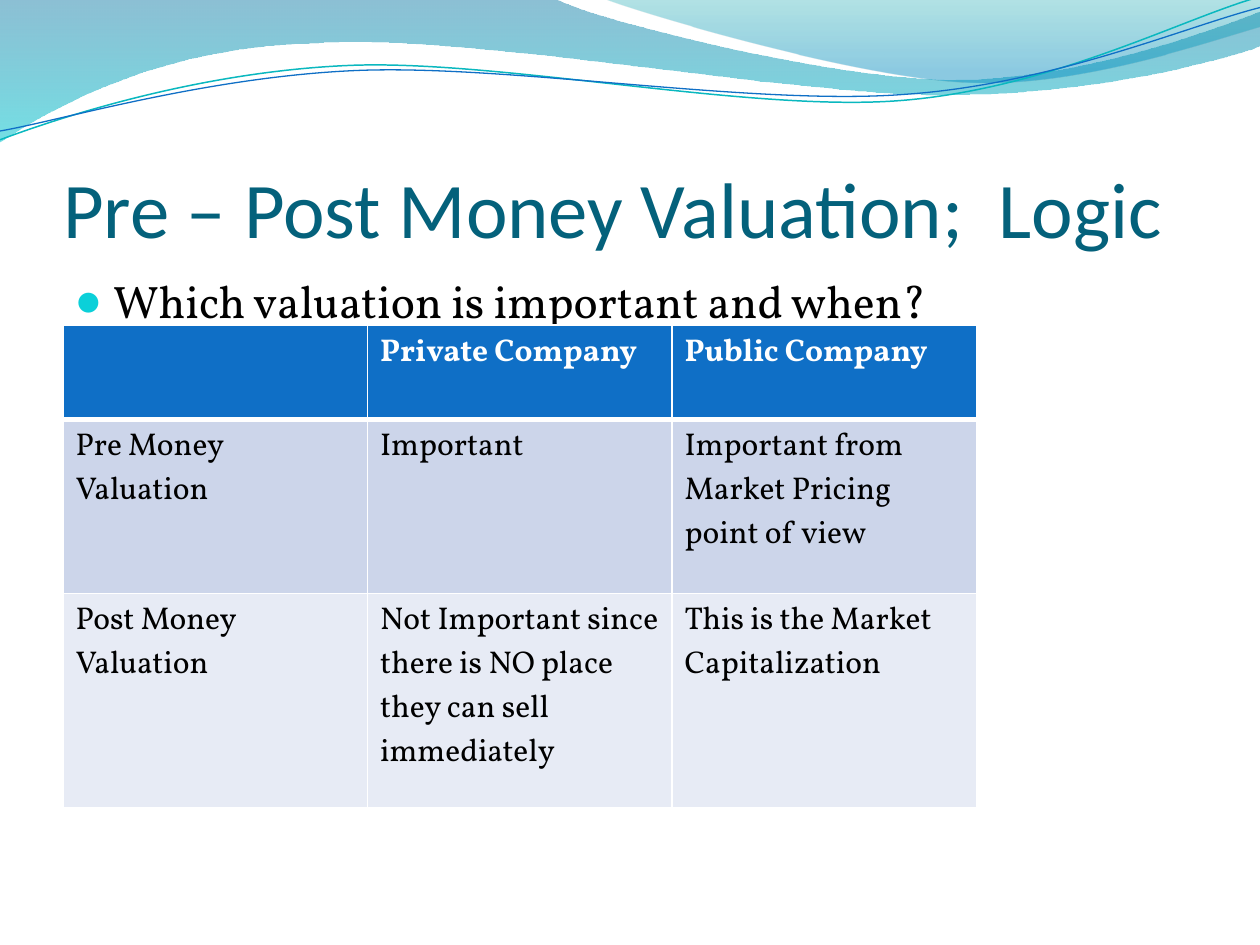
from dataclasses import dataclass
from pptx import Presentation
from pptx.dml.color import RGBColor
from pptx.enum.text import MSO_ANCHOR, MSO_AUTO_SIZE, PP_ALIGN
from pptx.oxml import parse_xml
from pptx.oxml.ns import nsdecls
from pptx.oxml.xmlchemy import OxmlElement
from pptx.util import Inches, Pt


@dataclass(frozen=True)
class Theme:
    title_font: str = "Calibri"
    body_font: str = "Vollkorn"
    title_size: int = 45
    body_size: int = 26
    table_size: int = 18
    title: str = "04617B"
    text: str = "000000"
    white: str = "FFFFFF"
    bullet: str = "0BD0D9"
    header: str = "0F6FC6"
    bands: tuple = ("CCD5EA", "E7EBF5")
    teal_line: str = "0AB8BF"
    blue_line: str = "0F6FC6"
    wide_wave: tuple = ((0, "0074A1", 45), (1, "00C6CF", 55))
    right_wave: tuple = ((0, "00A1A9", 30), (0.8, "008BBF", 45))


theme = Theme()


def add_wave(slide, start, segments, close):
    builder = slide.shapes.build_freeform(Inches(start[0]), Inches(start[1]))
    builder.add_line_segments([(Inches(x), Inches(y)) for seg in segments for x, y in seg], close=close)
    sp = builder.convert_to_shape()
    sp.shadow.inherit = False
    steps = iter(sp._element.spPr.xpath(".//a:path/a:lnTo"))
    for seg in segments:
        group = [next(steps) for point in seg]
        if len(group) == 3:
            curve = OxmlElement("a:cubicBezTo")
            group[0].addprevious(curve)
            for step in group:
                curve.append(step[0])
                step.getparent().remove(step)
    return sp


def style_text(p, font, size, color, bold=False):
    p.font.name = font
    p.font.size = Pt(size)
    p.font.bold = bold
    p.font.color.rgb = RGBColor.from_string(color)


prs = Presentation()
prs.slide_width, prs.slide_height = Inches(10), Inches(7.5)
s = prs.slides.add_slide(prs.slide_layouts[5])

filled_waves = [
    ((0, 0), [
        [(4.4, -0.01)],
        [(4.76, 0.17), (6.64, 0.63), (7.58, 0.63)],
        [(8.53, 0.63), (9.58, 0.26), (10, 0.09)],
        [(10.01, 0.36)],
        [(9.83, 0.44), (8.7, 0.76), (7.46, 0.75)],
        [(6.22, 0.75), (3.82, 0.28), (2.57, 0.34)],
        [(1.29, 0.36), (0.46, 0.83), (-0.01, 1.13)],
    ], theme.wide_wave),
    ((4.79, -0.01), [
        [(5.09, 0.11), (6.82, 0.62), (7.69, 0.65)],
        [(8.56, 0.69), (9.61, 0.32), (10, 0.21)],
        [(10, 0)],
    ], theme.right_wave),
]
for start, segments, stops in filled_waves:
    sp = add_wave(s, start, segments, True)
    sp.line.fill.background()
    sp.fill.gradient()
    sp.fill.gradient_angle = 270
    for stop, (position, color, opacity) in zip(sp.fill.gradient_stops, stops):
        stop.position = position
        stop.color.rgb = RGBColor.from_string(color)
    for clr, (position, color, opacity) in zip(sp._element.spPr.xpath(".//a:gs/a:srgbClr"), stops):
        alpha = OxmlElement("a:alpha")
        alpha.set("val", str(opacity * 1000))
        clr.append(alpha)

line_waves = [
    ((0, 1.11), [
        [(0.48, 0.93), (1.58, 0.57), (2.77, 0.52)],
        [(3.95, 0.47), (5.93, 0.89), (7.13, 0.8)],
        [(8.33, 0.71), (9.38, 0.15), (9.98, -0.02)],
    ], theme.teal_line, 0.85),
    ((0, 1.04), [
        [(0.47, 0.96), (1.64, 0.61), (2.83, 0.56)],
        [(4.03, 0.51), (5.97, 0.84), (7.17, 0.75)],
        [(8.36, 0.67), (9.41, 0.21), (10, 0.06)],
    ], theme.blue_line, 0.75),
]
for start, segments, color, width in line_waves:
    sp = add_wave(s, start, segments, False)
    sp.fill.background()
    sp.line.color.rgb = RGBColor.from_string(color)
    sp.line.width = Pt(width)

title = s.shapes.title
title.left, title.top, title.width, title.height = (Inches(v) for v in (0.5, 0.77, 9, 1.25))
tf = title.text_frame
tf.text = "Pre – Post Money Valuation;  Logic"
tf.auto_size = MSO_AUTO_SIZE.NONE
tf.vertical_anchor = MSO_ANCHOR.BOTTOM
tf.margin_left = tf.margin_right = tf.margin_bottom = 0
tf.margin_top = Inches(0.05)
p = tf.paragraphs[0]
p.alignment = PP_ALIGN.LEFT
style_text(p, theme.title_font, theme.title_size, theme.title)

body = s.shapes.add_textbox(Inches(0.5), Inches(2.12), Inches(9), Inches(4.8))
tf = body.text_frame
tf.word_wrap = True
p = tf.paragraphs[0]
p.text = "Which valuation is important and when?"
p.space_before = Pt(5.2)
style_text(p, theme.body_font, theme.body_size, theme.text)
pPr = p._p.get_or_add_pPr()
pPr.set("marL", str(Inches(0.3)))
pPr.set("indent", str(-Inches(0.3)))
for bullet in (f'<a:buClr {nsdecls("a")}><a:srgbClr val="{theme.bullet}"/></a:buClr>',
               f'<a:buSzPct {nsdecls("a")} val="95000"/>',
               f'<a:buFont {nsdecls("a")} typeface="{theme.title_font}"/>',
               f'<a:buChar {nsdecls("a")} char="●"/>'):
    pPr.insert_element_before(parse_xml(bullet), "a:tabLst", "a:defRPr", "a:extLst")

rows = [
    ["", "Private Company", "Public Company"],
    ["Pre Money Valuation", "Important", "Important from Market Pricing point of view"],
    ["Post Money Valuation", "Not Important since there is NO place they can sell immediately",
     "This is the Market Capitalization"],
]
table = s.shapes.add_table(3, 3, Inches(0.5), Inches(2.58), Inches(7.25), Inches(3.83)).table
for row, height in zip(table.rows, (0.75, 1.38, 1.7)):
    row.height = Inches(height)
for r, texts in enumerate(rows):
    header = r == 0
    for c, text in enumerate(texts):
        cell = table.cell(r, c)
        cell.text = text
        style_text(cell.text_frame.paragraphs[0], theme.body_font, theme.table_size,
                   theme.white if header else theme.text, header)
        tcPr = cell._tc.get_or_add_tcPr()
        for side in "LRTB":
            thick = (side == "B" and r == 0) or (side == "T" and r == 1)
            tcPr.append(parse_xml(
                f'<a:ln{side} {nsdecls("a")} w="{Pt(3 if thick else 1)}"><a:solidFill>'
                f'<a:srgbClr val="{theme.white}"/></a:solidFill></a:ln{side}>'))
        cell.fill.solid()
        cell.fill.fore_color.rgb = RGBColor.from_string(theme.header if header else theme.bands[r - 1])

prs.save("out.pptx")
